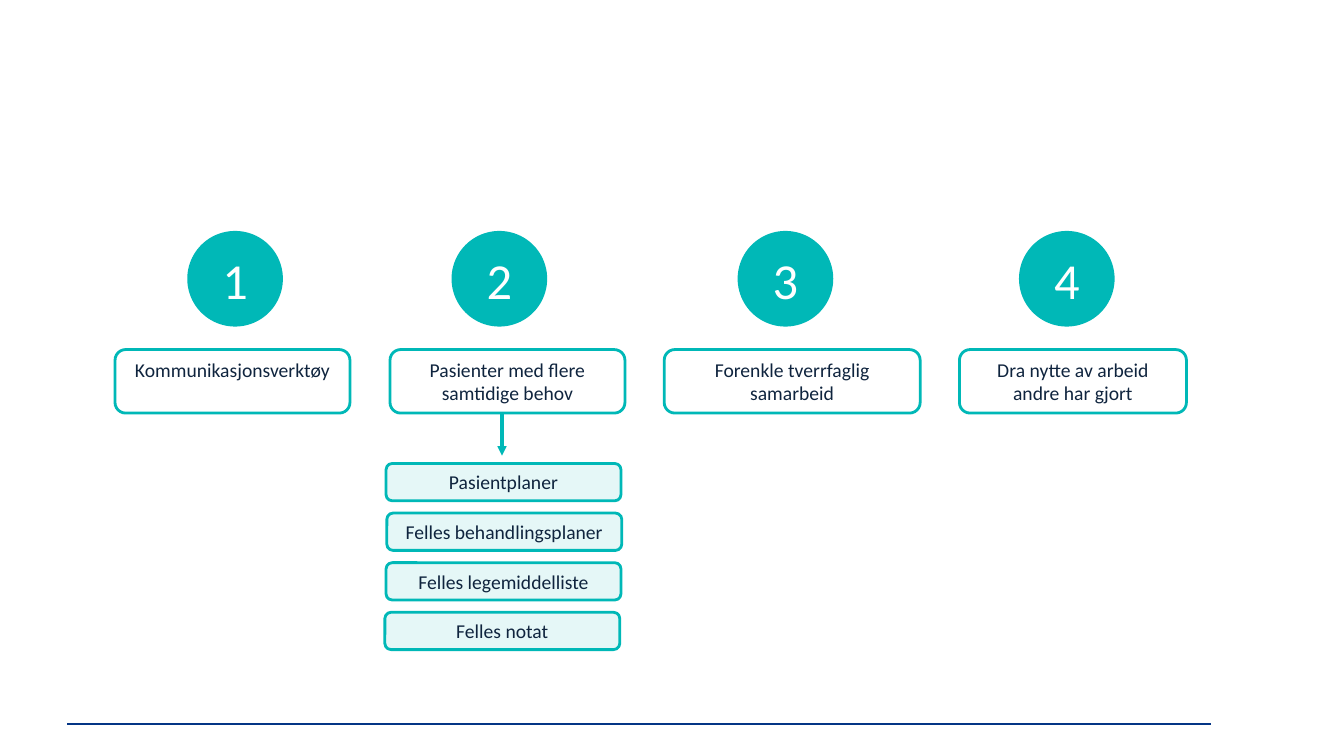
from lxml import etree
from pptx import Presentation
from pptx import util as u
from pptx.dml.color import RGBColor
from pptx.enum import shapes, text
from pptx.oxml.ns import qn

HUES = {"teal": "00B8B7", "navy": "043585", "ink": "0F243E", "white": "FFFFFF"}


class Board:
    font = "Calibri"

    def __init__(self, slide):
        self.slide = slide

    def hue(self, name):
        return RGBColor.from_string(HUES[name])

    def label(self, shape, words, size, hue):
        frame = shape.text_frame
        frame.word_wrap = True
        frame.vertical_anchor = text.MSO_ANCHOR.TOP
        para = frame.paragraphs[0]
        para.text = words
        para.alignment = text.PP_ALIGN.CENTER
        para.font.name = self.font
        para.font.size = u.Pt(size)
        para.font.color.rgb = self.hue(hue)

    def shape(self, kind, fill, *area):
        form = self.slide.shapes.add_shape(kind, *map(u.Cm, area))
        form.shadow.inherit = False
        form.fill.solid()
        form.fill.fore_color.rgb = self.hue(fill)
        return form

    def box(self, words, fill, *area, alpha=None):
        form = self.shape(shapes.MSO_SHAPE.ROUNDED_RECTANGLE, fill, *area)
        form.line.color.rgb = self.hue("teal")
        form.line.width = u.Pt(2)
        if alpha:
            tint = form._element.spPr.find(qn("a:solidFill"))[0]
            etree.SubElement(tint, qn("a:alpha"), val=str(alpha * 1000))
        self.label(form, words, 14, "ink")

    def badge(self, number, left, top, size):
        disc = self.shape(shapes.MSO_SHAPE.OVAL, "teal", left, top, size, size)
        disc.line.fill.background()
        area = left - 0.05, top + 0.33, size + 0.1, 1.8
        digit = self.slide.shapes.add_textbox(*map(u.Cm, area))
        self.label(digit, str(number), 36, "white")

    def line(self, hue, width, *ends, arrow=False):
        link = self.slide.shapes.add_connector(
            shapes.MSO_CONNECTOR.STRAIGHT, *map(u.Cm, ends))
        link.line.color.rgb = self.hue(hue)
        link.line.width = u.Pt(width)
        props = link._element.spPr
        if arrow:
            stroke = props.find(qn("a:ln"))
            etree.SubElement(stroke, qn("a:tailEnd"), type="triangle")
        etree.SubElement(props, qn("a:effectLst"))


def main():
    deck = Presentation()
    deck.slide_width, deck.slide_height = u.Cm(33.87), u.Cm(19.05)
    board = Board(deck.slides.add_slide(deck.slide_layouts[6]))

    board.line("navy", 1.25, 1.7, 18.24, 30.53, 18.24)

    goals = [
        ("Kommunikasjonsverktøy", 2.9, 5.92, 4.72),
        ("Pasienter med flere samtidige behov", 9.83, 5.92, 11.38),
        ("Forenkle tverrfaglig samarbeid", 16.74, 6.45, 18.59),
        ("Dra nytte av arbeid andre har gjort", 24.18, 5.72, 25.68),
    ]
    for number, (words, left, width, disc) in enumerate(goals, 1):
        board.box(words, "white", left, 8.81, width, 1.6)
        board.badge(number, disc, 5.82, 2.41)

    board.line("teal", 2.25, 12.65, 10.41, 12.65, 11.48, arrow=True)

    plans = [
        ("Pasientplaner", 9.73),
        ("Felles behandlingsplaner", 9.75),
        ("Felles legemiddelliste", 9.73),
        ("Felles notat", 9.7),
    ]
    for row, (words, left) in enumerate(plans):
        board.box(words, "teal", left, 11.68 + row * 1.25, 5.92, 0.94, alpha=10)

    deck.save("out.pptx")


if __name__ == "__main__":
    main()
